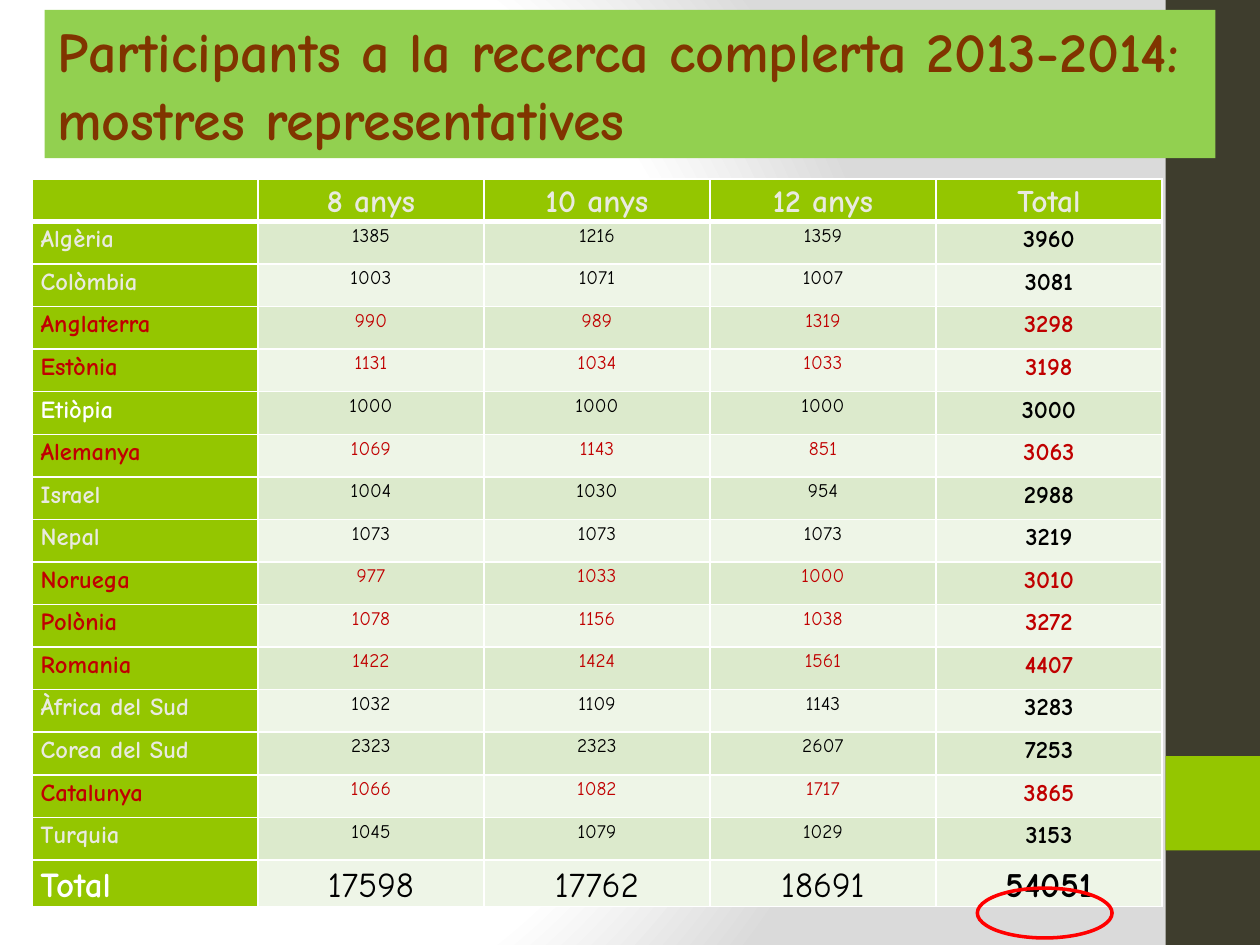
"""Build the slide of participants per country and age group."""
from pptx import Presentation
from pptx.dml.color import RGBColor
from pptx.enum.shapes import MSO_SHAPE
from pptx.enum.text import MSO_ANCHOR, MSO_AUTO_SIZE, PP_ALIGN
from pptx.oxml import parse_xml
from pptx.util import Pt

RECTANGLE, OVAL = MSO_SHAPE.RECTANGLE, MSO_SHAPE.OVAL
LEFT, CENTER = PP_ALIGN.LEFT, PP_ALIGN.CENTER
MIDDLE = MSO_ANCHOR.MIDDLE
FIT_SHAPE = MSO_AUTO_SIZE.SHAPE_TO_FIT_TEXT

FONT = "Comic Neue"
NS = ('xmlns:a="http://schemas.openxmlformats.org/drawingml/2006/main" '
      'xmlns:p="http://schemas.openxmlformats.org/presentationml/2006/main"')
WHITE = RGBColor(0xFF, 0xFF, 0xFF)
BLACK = RGBColor(0x00, 0x00, 0x00)
CREAM = RGBColor(0xE9, 0xEA, 0xE0)
DARK = RGBColor(0x3E, 0x3D, 0x2D)
GREEN = RGBColor(0x94, 0xC6, 0x00)
TITLE_GREEN = RGBColor(0x92, 0xD0, 0x50)
BROWN = RGBColor(0x80, 0x34, 0x00)
CRIMSON = RGBColor(0xC0, 0x00, 0x00)
RED = RGBColor(0xFF, 0x00, 0x00)
BANDS = (RGBColor(0xEE, 0xF5, 0xE7), RGBColor(0xDC, 0xEA, 0xCC))

HEADER = ("", "8 anys", "10 anys", "12 anys", "Total")
COUNTRIES = [
    ("Algèria", 1385, 1216, 1359, 3960),
    ("Colòmbia", 1003, 1071, 1007, 3081),
    ("Anglaterra", 990, 989, 1319, 3298),
    ("Estònia", 1131, 1034, 1033, 3198),
    ("Etiòpia", 1000, 1000, 1000, 3000),
    ("Alemanya", 1069, 1143, 851, 3063),
    ("Israel", 1004, 1030, 954, 2988),
    ("Nepal", 1073, 1073, 1073, 3219),
    ("Noruega", 977, 1033, 1000, 3010),
    ("Polònia", 1078, 1156, 1038, 3272),
    ("Romania", 1422, 1424, 1561, 4407),
    ("Àfrica del Sud", 1032, 1109, 1143, 3283),
    ("Corea del Sud", 2323, 2323, 2607, 7253),
    ("Catalunya", 1066, 1082, 1717, 3865),
    ("Turquia", 1045, 1079, 1029, 3153),
]
TOTALS = ("Total", 17598, 17762, 18691, 54051)
HIGHLIGHTED = {"Anglaterra", "Estònia", "Alemanya", "Noruega", "Polònia",
               "Romania", "Catalunya"}
WHITE_LABELS = {"Etiòpia", "Total"}


def write(paragraph, text, align, size, color, bold):
    paragraph.alignment = align
    run = paragraph.add_run()
    run.text = text
    run.font.color.rgb = color
    for name, value in {"name": FONT, "size": Pt(size), "bold": bold}.items():
        setattr(run.font, name, value)


def add_border(cell, index, side, width):
    cell._tc.get_or_add_tcPr().insert(index, parse_xml(
        f'<a:ln{side} {NS} w="{Pt(width)}"><a:solidFill>'
        f'<a:srgbClr val="{WHITE}"/></a:solidFill></a:ln{side}>'))


prs = Presentation()
prs.slide_width, prs.slide_height = Pt(720), Pt(540)
slide = prs.slides.add_slide(prs.slide_layouts[5])
slide.element.cSld.insert(0, parse_xml(
    f'<p:bg {NS}><p:bgPr><a:gradFill rotWithShape="1"><a:gsLst>'
    '<a:gs pos="0"><a:srgbClr val="FFFFFF"/></a:gs>'
    '<a:gs pos="75000"><a:srgbClr val="FFFFFF"/></a:gs>'
    '<a:gs pos="100000"><a:srgbClr val="DADADA"/></a:gs></a:gsLst>'
    '<a:path path="circle">'
    '<a:fillToRect l="20000" t="50000" r="100000" b="50000"/></a:path>'
    '</a:gradFill><a:effectLst/></p:bgPr></p:bg>'))

for top, height, color in ((0, 540, DARK), (432, 54, GREEN)):
    side_band = slide.shapes.add_shape(RECTANGLE, Pt(666), Pt(top), Pt(54), Pt(height))
    side_band.shadow.inherit = False
    side_band.fill.solid()
    side_band.fill.fore_color.rgb = color
    side_band.line.fill.background()

rows = [HEADER, *COUNTRIES, TOTALS]
last = len(rows) - 1
participants = slide.shapes.add_table(
    len(rows), len(HEADER), Pt(18.25), Pt(102.25), Pt(645.75), Pt(414)).table
for column in participants.columns:
    column.width = Pt(129.15)
for r, values in enumerate(rows):
    participants.rows[r].height = Pt(26.2 if r == last else 24.34)
    label = values[0]
    for c, value in enumerate(values):
        cell = participants.cell(r, c)
        margins = {"margin_left": Pt(5), "margin_right": Pt(5),
                   "margin_top": 0, "margin_bottom": 0}
        for name, margin in margins.items():
            setattr(cell, name, margin)
        cell.fill.solid()
        cell.fill.fore_color.rgb = GREEN if r == 0 or c == 0 else BANDS[r % 2]
        widths = {"L": 1, "R": 1, "T": 3 if r == 1 else 1, "B": 3 if r == 0 else 1}
        for index, (side, width) in enumerate(widths.items()):
            add_border(cell, index, side, width)

        if label in HIGHLIGHTED:
            color = CRIMSON
        elif r == 0 or c == 0:
            color = WHITE if label in WHITE_LABELS else CREAM
        else:
            color = BLACK
        outer = r == 0 or c in (0, len(HEADER) - 1)
        size = 18 if r == 0 else 20 if r == last else 14 if outer else 11
        paragraph = cell.text_frame.paragraphs[0]
        paragraph.line_spacing = 1.15
        if value != "":
            write(paragraph, str(value), LEFT if c == 0 else CENTER, size, color, outer)

title = slide.shapes.title
title_box = {"left": Pt(25.5), "top": Pt(5.6), "width": Pt(669), "height": Pt(84.8)}
for name, value in title_box.items():
    setattr(title, name, value)
title.fill.solid()
title.fill.fore_color.rgb = TITLE_GREEN
frame_format = {"word_wrap": True, "vertical_anchor": MIDDLE, "auto_size": FIT_SHAPE}
for name, value in frame_format.items():
    setattr(title.text_frame, name, value)
write(title.text_frame.paragraphs[0],
      "Participants a la recerca complerta 2013-2014: mostres representatives",
      LEFT, 32, BROWN, True)
title.element.getparent().append(title.element)

total_ring = slide.shapes.add_shape(OVAL, Pt(558.5), Pt(507.5), Pt(77), Pt(28.5))
total_ring.shadow.inherit = False
total_ring.fill.background()
total_ring.line.color.rgb = RED
total_ring.line.width = Pt(2)

prs.save("out.pptx")
